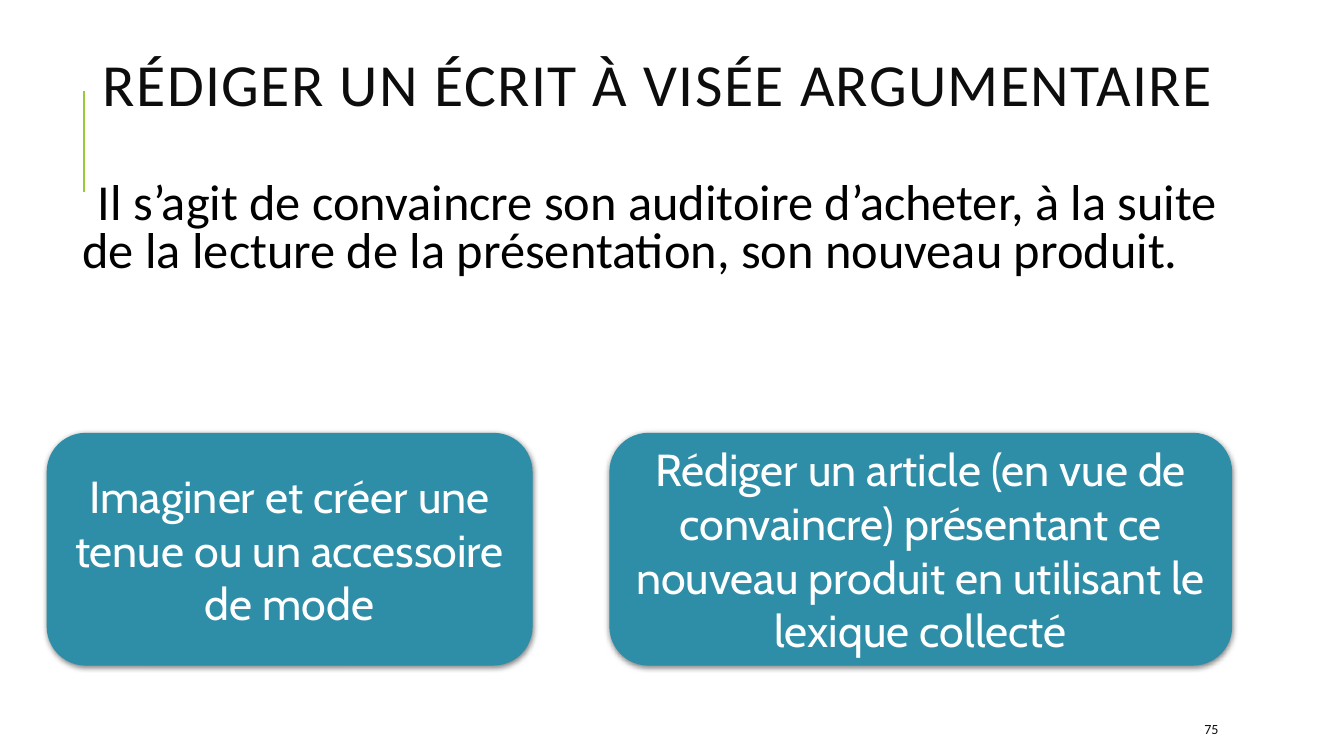
"""Build the slide on writing a persuasive text."""
from dataclasses import dataclass

from lxml.etree import SubElement as Sub
from pptx import Presentation as Deck
from pptx.dml.color import RGBColor as Rgb
from pptx.enum.shapes import MSO_CONNECTOR as Link, MSO_SHAPE as Form
from pptx.enum.text import MSO_ANCHOR as Anchor, MSO_AUTO_SIZE as Fit, PP_ALIGN as Align
from pptx.oxml.ns import qn
from pptx.shapes.autoshape import Shape
from pptx.shapes.connector import Connector
from pptx.slide import Slide
from pptx.text.text import _Paragraph as Para
from pptx.util import Cm, Pt

GREEN, TEAL, WHITE, BLACK, INK = "99CB38", "2E8EA8", "FFFFFF", "000000", "0D0D0D"


@dataclass
class Box:
    """Place and size in centimetres."""
    left: float
    top: float
    width: float
    height: float

    def sides(self) -> tuple:
        """Return the four lengths."""
        return Cm(self.left), Cm(self.top), Cm(self.width), Cm(self.height)


@dataclass
class Card:
    """A rounded task card."""
    left: float
    width: float
    text: str


CARD_TOP, CARD_HIGH = 10.92, 5.84
CARDS = [
    Card(1.19, 12.22, "Imaginer et créer une tenue ou un accessoire de mode"),
    Card(15.37, 15.67, "Rédiger un article (en vue de convaincre) présentant ce "
                       "nouveau produit en utilisant le lexique collecté"),
]


def color(code: str) -> Rgb:
    """Turn a hex string into a colour."""
    return Rgb.from_string(code)


def stroke(item: Shape | Connector, code: str, width: float) -> None:
    """Set the colour and width of a line."""
    item.line.color.rgb = color(code)
    item.line.width = Pt(width)


def write(shape: Shape, text: str, *, size: float, font: str = "Calibri", ink: str = INK,
          align: Align = Align.LEFT, anchor: Anchor = Anchor.MIDDLE,
          lead: float = 1.0, track: float = 0, inset: float | None = None) -> Para:
    """Put formatted text in a shape and return its paragraph."""
    frame = shape.text_frame
    frame.word_wrap = True
    frame.auto_size = Fit.NONE
    frame.vertical_anchor = anchor
    if inset is not None:
        frame.margin_left = frame.margin_right = Cm(inset)
        frame.margin_top = frame.margin_bottom = Cm(inset)
    para = frame.paragraphs[0]
    para.alignment = align
    para.line_spacing = lead
    para.space_before = Pt(0)
    run = para.add_run()
    run.text = text
    run.font.name = font
    run.font.size = Pt(size)
    run.font.color.rgb = color(ink)
    if track:
        run.font._element.set("spc", str(int(track * 100)))
    return para


def label(slide: Slide, box: Box, text: str, **style) -> Para:
    """Add a text box."""
    return write(slide.shapes.add_textbox(*box.sides()), text, **style)


def bullet(para: Para, mark: str, code: str, hang: float) -> None:
    """Give a paragraph a coloured bullet and a hanging indent."""
    props = para._p.get_or_add_pPr()
    props.set("marL", str(Cm(hang)))
    props.set("indent", str(-Cm(hang)))
    Sub(Sub(props, qn("a:buClr")), qn("a:srgbClr"), val=code)
    Sub(props, qn("a:buChar"), char=mark)


def shade(shape: Shape) -> None:
    """Add a soft shadow below a shape."""
    shape.shadow.inherit = False
    effects = shape._element.spPr.find(qn("a:effectLst"))
    outer = Sub(effects, qn("a:outerShdw"), blurRad=str(Pt(4)), dist=str(Pt(1)),
                dir=str(90 * 60000), rotWithShape="0")
    Sub(Sub(outer, qn("a:srgbClr"), val=BLACK), qn("a:alpha"), val="50000")


def draw(slide: Slide, card: Card) -> None:
    """Draw one task card."""
    box = Box(card.left, CARD_TOP, card.width, CARD_HIGH)
    shape = slide.shapes.add_shape(Form.ROUNDED_RECTANGLE, *box.sides())
    shape.fill.solid()
    shape.fill.fore_color.rgb = color(TEAL)
    stroke(shape, TEAL, 0.75)
    shade(shape)
    write(shape, card.text, size=32, font="Cabin", ink=WHITE, align=Align.CENTER)


def main() -> None:
    """Build and save the deck."""
    deck = Deck()
    deck.slide_width, deck.slide_height = Cm(33.87), Cm(19.05)
    slide = deck.slides.add_slide(deck.slide_layouts[5])

    rule = slide.shapes.add_connector(Link.STRAIGHT, Cm(2.11), Cm(4.83), Cm(2.11), Cm(2.29))
    stroke(rule, GREEN, 1.5)
    Sub(rule._element.spPr, qn("a:effectLst"))

    title = slide.shapes.title
    title.left, title.top, title.width, title.height = Box(2.34, 0.66, 29.85, 3.18).sides()
    write(title, "RÉDIGER UN ÉCRIT À VISÉE ARGUMENTAIRE", size=42.7, lead=0.8, track=1)

    label(slide, Box(30.1, 17.98, 2.69, 0.76), "75", size=10)
    aim = label(slide, Box(1.7, 4.45, 30.48, 2.9),
                "Il s’agit de convaincre son auditoire d’acheter, à la suite de "
                "la lecture de la présentation, son nouveau produit.",
                size=36, ink=BLACK, anchor=Anchor.TOP, lead=0.8, inset=0.13)
    bullet(aim, " ", GREEN, 0.25)

    for card in CARDS:
        draw(slide, card)
    deck.save("out.pptx")


if __name__ == "__main__":
    main()
